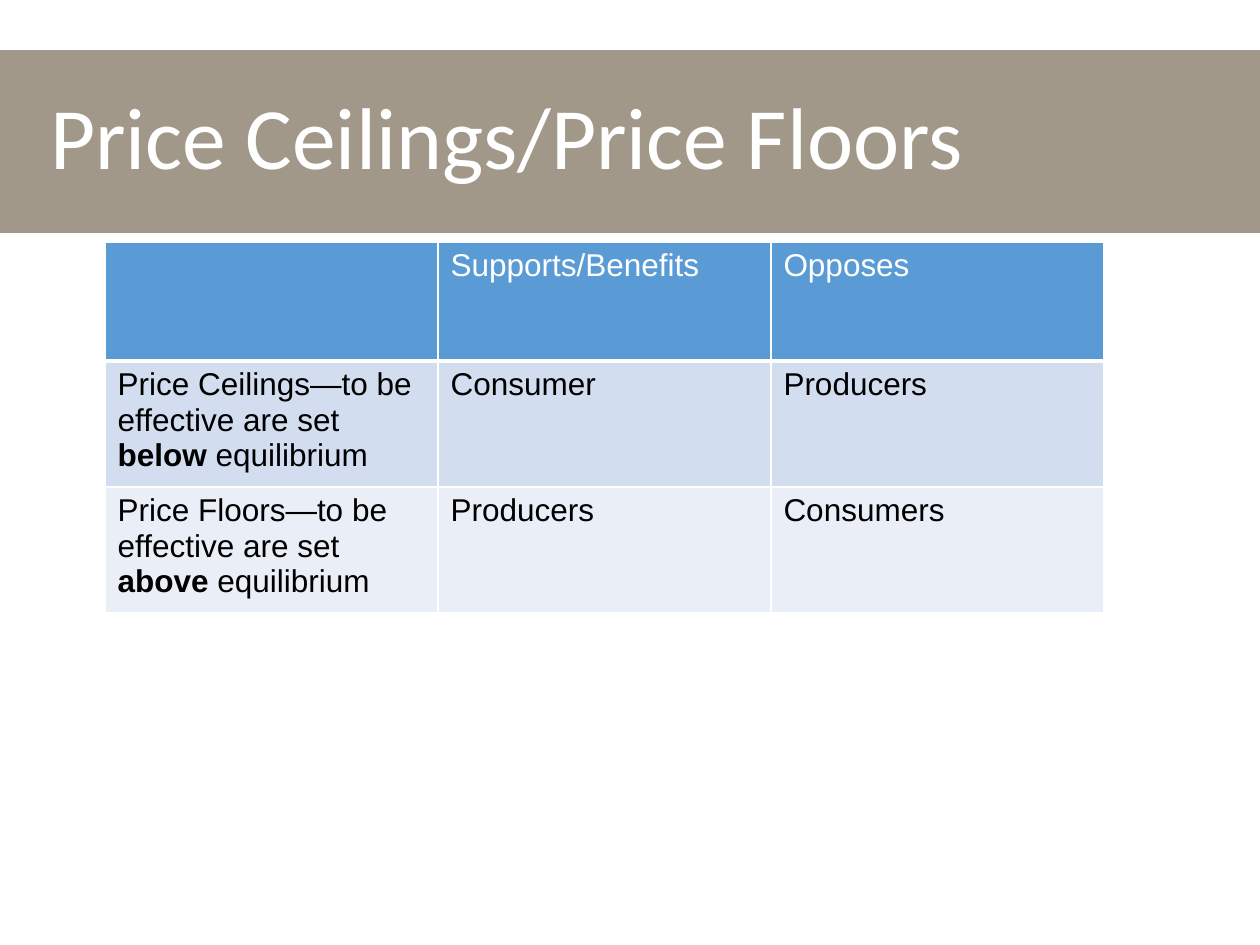
from lxml.etree import SubElement
from pptx import Presentation
from pptx.dml.color import RGBColor
from pptx.enum.text import MSO_ANCHOR, MSO_AUTO_SIZE, PP_ALIGN
from pptx.oxml.ns import qn
from pptx.util import Pt

HUES = {"band": "A2988A", "head": "5B9BD5", "odd": "D2DEEF",
        "even": "EAEFF7", "white": "FFFFFF", "black": "000000"}
TITLE = "Price Ceilings/Price Floors"
# Each cell is a list of (text, bold) runs.
ROWS = [
    [[], [("Supports/Benefits", False)], [("Opposes", False)]],
    [[("Price Ceilings—to be effective are set ", False), ("below", True),
      (" equilibrium", False)],
     [("Consumer", False)], [("Producers", False)]],
    [[("Price Floors—to be effective are set ", False), ("above", True),
      (" equilibrium", False)],
     [("Producers", False)], [("Consumers", False)]],
]
# Fill, text colour, height and bottom border width of each row.
LOOKS = [("head", "white", 119, 3), ("odd", "black", 126, 1),
         ("even", "black", 126, 1)]
COL = 333
LEFT, TOP = 105, 242


def px(n):
    return round(n * 914400 / 126)


def hue(name):
    return RGBColor.from_string(HUES[name])


def add_run(par, text, font, size, color, bold=False):
    run = par.add_run()
    run.text = text
    run.font.name = font
    run.font.size = Pt(size)
    run.font.bold = bold
    run.font.color.rgb = hue(color)


def edge(cell, base):
    """Draw white cell borders; base is the bottom width in points."""
    props = cell._tc.get_or_add_tcPr()
    for tag, width in (("lnL", 1), ("lnR", 1), ("lnT", 1), ("lnB", base)):
        line = SubElement(props, qn("a:" + tag), w=str(Pt(width)))
        fill = SubElement(line, qn("a:solidFill"))
        SubElement(fill, qn("a:srgbClr"), val=HUES["white"])


def add_title(slide):
    title = slide.shapes.title
    title.left, title.top = 0, px(50)
    title.width, title.height = px(1260), px(183)
    title.fill.solid()
    title.fill.fore_color.rgb = hue("band")
    frame = title.text_frame
    frame.auto_size = MSO_AUTO_SIZE.NONE
    frame.vertical_anchor = MSO_ANCHOR.MIDDLE
    frame.margin_left = px(50)
    par = frame.paragraphs[0]
    par.alignment = PP_ALIGN.LEFT
    par.line_spacing = 0.9
    add_run(par, TITLE, "Calibri", 50, "white")


def add_grid(slide):
    count = len(ROWS[0])
    high = sum(look[2] for look in LOOKS)
    table = slide.shapes.add_table(len(ROWS), count, px(LEFT), px(TOP),
                                   px(COL * count), px(high)).table
    for col in table.columns:
        col.width = px(COL)
    for row, texts, (fill, color, tall, base) in zip(table.rows, ROWS, LOOKS):
        row.height = px(tall)
        for cell, runs in zip(row.cells, texts):
            edge(cell, base)
            cell.fill.solid()
            cell.fill.fore_color.rgb = hue(fill)
            for text, bold in runs:
                add_run(cell.text_frame.paragraphs[0], text, "Arial", 18,
                        color, bold)


def main():
    deck = Presentation()
    deck.slide_width, deck.slide_height = px(1260), px(945)
    slide = deck.slides.add_slide(deck.slide_layouts[5])
    add_title(slide)
    add_grid(slide)
    deck.save("out.pptx")


if __name__ == "__main__":
    main()
